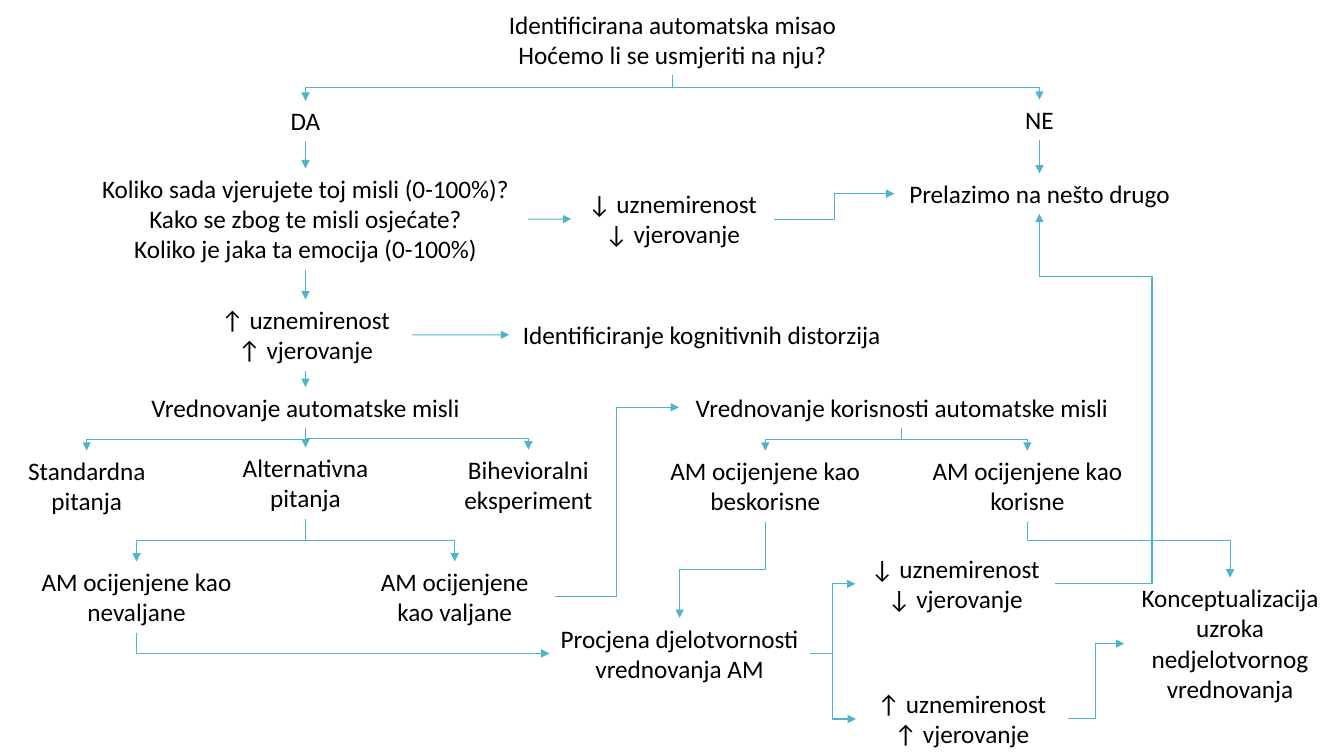
"""Build a one-slide flowchart on working with automatic thoughts."""
from lxml.etree import SubElement
from pptx import Presentation
from pptx.dml.color import RGBColor
from pptx.enum.shapes import MSO_CONNECTOR as LINK
from pptx.enum.text import MSO_AUTO_SIZE as AUTO, PP_ALIGN as ALIGN
from pptx.oxml.ns import qn
from pptx.util import Inches, Pt

COLORS = {"text": "000000", "arrow": "50B4C8", "page": "FFFFFF"}
CELL = Inches(0.1)
LINE_ROWS, PADDING_ROWS = 3.03, 1.0
LEFT_AXIS, MIDDLE_AXIS, RIGHT_AXIS = 30.3, 66.7, 103.1
LESS = "↓ uznemirenost\n↓ vjerovanje"
MORE = "↑ uznemirenost\n↑ vjerovanje"

# name: text, centre column, top row, columns wide, lines of text
STEPS = {
    "start": ("Identificirana automatska misao\nHoćemo li se usmjeriti na nju?", MIDDLE_AXIS, 0.4, 35.3, 2),
    "yes": ("DA", LEFT_AXIS, 10, 35.3, 1),
    "no": ("NE", RIGHT_AXIS, 9.9, 35.3, 1),
    "belief": ("Koliko sada vjerujete toj misli (0-100%)?\nKako se zbog te misli osjećate?\n"
               "Koliko je jaka ta emocija (0-100%)", LEFT_AXIS, 16.7, 44.2, 3),
    "move_on": ("Prelazimo na nešto drugo", RIGHT_AXIS, 17.2, 28.8, 1),
    "more_distress": (MORE, LEFT_AXIS, 29.7, 21.2, 2),
    "less_distress": (LESS, MIDDLE_AXIS, 18.2, 20.1, 2),
    "evaluation": ("Vrednovanje automatske misli", LEFT_AXIS, 38.4, 34.3, 1),
    "distortions": ("Identificiranje kognitivnih distorzija", 69.6, 31.2, 38.2, 1),
    "valid": ("AM ocijenjene kao valjane", 45.1, 55.7, 19.8, 2),
    "invalid": ("AM ocijenjene kao nevaljane", 13.55, 55.7, 21.7, 2),
    "usefulness": ("Vrednovanje korisnosti automatske misli", 89.45, 38.4, 44.2, 1),
    "efficacy": ("Procjena djelotvornosti vrednovanja AM", 67.4, 61.3, 25.8, 2),
    "less_after": (LESS, 94.75, 54.4, 19.8, 2),
    "more_after": (MORE, 95.4, 67.8, 21, 2),
    "standard": ("Standardna pitanja", 8.6, 44.7, 17.2, 2),
    "alternative": ("Alternativna pitanja", LEFT_AXIS, 44.4, 18.5, 2),
    "experiment": ("Bihevioralni eksperiment", 52.4, 44.6, 23.2, 2),
    "concept": ("Konceptualizacija uzroka nedjelotvornog vrednovanja", 122, 57.3, 21, 4),
    "useless": ("AM ocijenjene kao beskorisne", 75.9, 44.7, 27.1, 2),
    "useful": ("AM ocijenjene kao korisne", 101.9, 44.7, 20.8, 2),
}

DOWNWARD = [
    ("start", "yes"), ("start", "no"), ("yes", "belief"), ("no", "move_on"),
    ("belief", "more_distress"), ("more_distress", "evaluation"),
    ("evaluation", "alternative"), ("evaluation", "standard"), ("evaluation", "experiment"),
    ("alternative", "invalid"), ("alternative", "valid"),
    ("usefulness", "useless"), ("usefulness", "useful"), ("useless", "efficacy"),
]
SIDEWAYS = [
    ("belief", "less_distress"), ("less_distress", "move_on"), ("more_distress", "distortions"),
    ("valid", "usefulness"), ("efficacy", "less_after"), ("efficacy", "more_after"),
    ("more_after", "concept"),
]


def cells(count):
    return round(count * CELL)


def side(name, edge):
    _, centre, top, width, lines = STEPS[name]
    height = PADDING_ROWS + LINE_ROWS * lines
    return {
        "top": (centre, top),
        "bottom": (centre, top + height),
        "left": (centre - width / 2, top + height / 2),
        "right": (centre + width / 2, top + height / 2),
    }[edge]


def add_text(page, text, *, left, top, width, height, size=18, font="Calibri", color="text"):
    box = page.shapes.add_textbox(cells(left), cells(top), cells(width), cells(height))
    frame = box.text_frame
    frame.word_wrap = True
    frame.auto_size = AUTO.SHAPE_TO_FIT_TEXT
    for index, line in enumerate(text.split("\n")):
        para = frame.paragraphs[0] if index == 0 else frame.add_paragraph()
        para.alignment = ALIGN.CENTER
        span = para.add_run()
        span.text = line
        span.font.name = font
        span.font.size = Pt(size)
        span.font.color.rgb = RGBColor.from_string(COLORS[color])


def add_arrow(page, begin, end, *, downward=False, preset="bentConnector3", bends=()):
    (x1, y1), (x2, y2) = begin, end
    straight = min(abs(x2 - x1), abs(y2 - y1)) < 0.1
    turn = 0
    if downward and not straight:
        middle_x, middle_y = (x1 + x2) / 2, (y1 + y2) / 2
        half_width, half_height = (y2 - y1) / 2, abs(x2 - x1) / 2
        turn = 270 if x2 > x1 else 90
        flip = -1 if turn == 270 else 1
        x1, x2 = middle_x - flip * half_width, middle_x + flip * half_width
        y1, y2 = middle_y - half_height, middle_y + half_height
    kind = LINK.STRAIGHT if straight else LINK.ELBOW
    arrow = page.shapes.add_connector(kind, cells(x1), cells(y1), cells(x2), cells(y2))
    arrow.line.width = Pt(0.75)
    arrow.line.color.rgb = RGBColor.from_string(COLORS["arrow"])
    properties = arrow._element.spPr
    if not straight:
        properties.find(qn("a:xfrm")).set("rot", str(turn * 60000))
        geometry = properties.find(qn("a:prstGeom"))
        geometry.set("prst", preset)
        guides = geometry.find(qn("a:avLst"))
        for index, bend in enumerate(bends, 1):
            label = "adj1" if len(bends) == 1 else f"adj{index}"
            SubElement(guides, qn("a:gd"), name=label, fmla=f"val {round(bend * 100000)}")
    SubElement(properties.find(qn("a:ln")), qn("a:tailEnd"), type="triangle")
    SubElement(properties, qn("a:effectLst"))


def main():
    deck = Presentation()
    deck.slide_width, deck.slide_height = Inches(13.33), Inches(7.5)
    page = deck.slides.add_slide(deck.slide_layouts[6])
    page.background.fill.solid()
    page.background.fill.fore_color.rgb = RGBColor.from_string(COLORS["page"])
    for text, centre, top, width, lines in STEPS.values():
        add_text(page, text, left=centre - width / 2, top=top, width=width,
                 height=PADDING_ROWS + LINE_ROWS * lines)
    for source, target in DOWNWARD:
        add_arrow(page, side(source, "bottom"), side(target, "top"), downward=True)
    for source, target in SIDEWAYS:
        add_arrow(page, side(source, "right"), side(target, "left"))
    add_arrow(page, side("useful", "bottom"), side("concept", "top"), downward=True, bends=(0.34,))
    add_arrow(page, side("invalid", "bottom"), side("efficacy", "left"), downward=True,
              preset="bentConnector2")
    add_arrow(page, side("less_after", "right"), side("move_on", "bottom"),
              preset="bentConnector4", bends=(-6.2, 0.83))
    deck.save("out.pptx")


if __name__ == "__main__":
    main()
